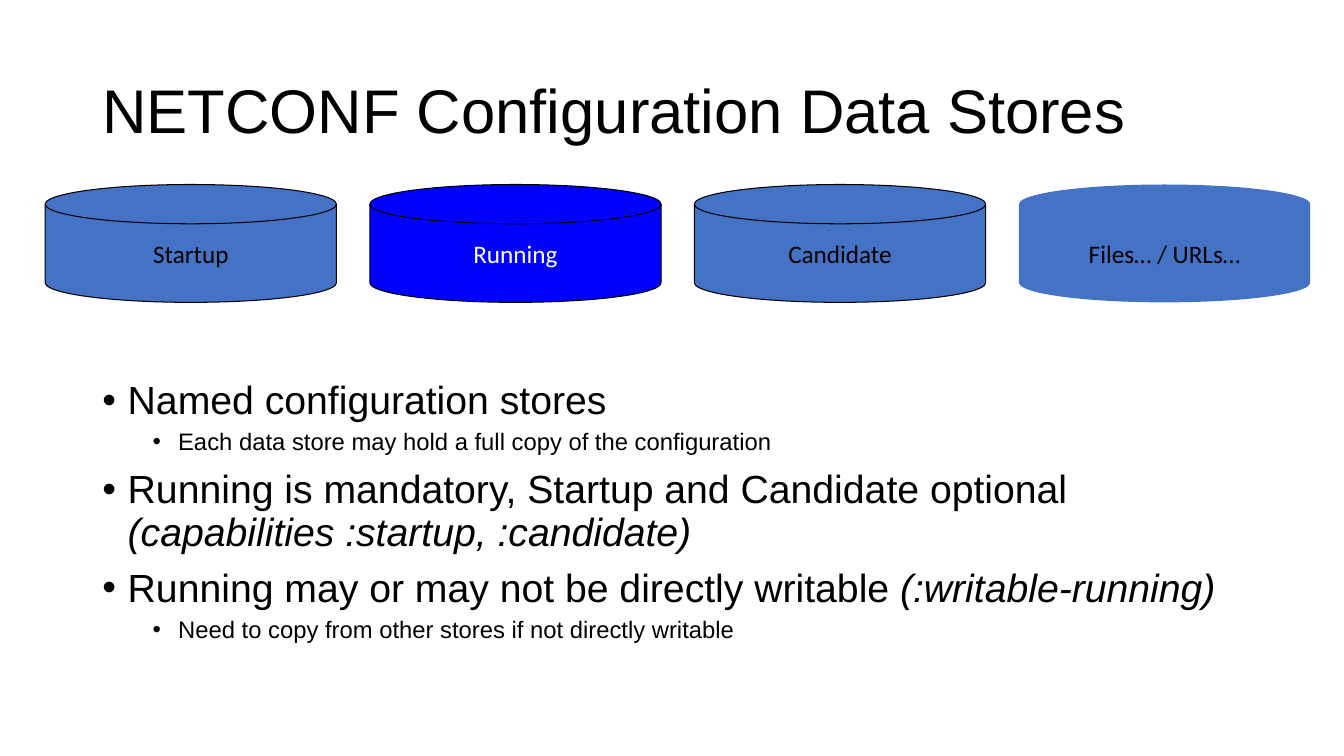
import pptx
import pptx.dml.color
import pptx.enum.shapes
import pptx.enum.text
import pptx.oxml.ns
import pptx.util
from lxml import etree

Cm = pptx.util.Cm
Pt = pptx.util.Pt
RGBColor = pptx.dml.color.RGBColor

BLACK = RGBColor(0x00, 0x00, 0x00)
WHITE = RGBColor(0xFF, 0xFF, 0xFF)
BLUE = RGBColor(0x44, 0x72, 0xC4)
BRIGHT_BLUE = RGBColor(0x00, 0x00, 0xFF)

STORES = [
    ("Startup", BLUE, BLACK, True),
    ("Running", BRIGHT_BLUE, WHITE, True),
    ("Candidate", BLUE, BLACK, True),
    ("Files… / URLs…", BLUE, BLACK, False),
]

POINTS = [
    (0, "Named configuration stores", ""),
    (1, "Each data store may hold a full copy of the configuration", ""),
    (0, "Running is mandatory, Startup and Candidate optional ", "(capabilities :startup, :candidate)"),
    (0, "Running may or may not be directly writable ", "(:writable-running)"),
    (1, "Need to copy from other stores if not directly writable", ""),
]


class Deck:
    text_font = "Arial"
    store_font = "Calibri"
    title_size = 44
    store_size = 18
    point_sizes = (28, 17)
    point_gaps = (10, 5)
    point_indents = (0.64, 1.91)
    hanging = 0.64
    line_spacing = 0.9

    def __init__(self):
        self.prs = pptx.Presentation()
        self.prs.slide_width = Cm(33.87)
        self.prs.slide_height = Cm(19.05)
        self.s = self.prs.slides.add_slide(self.prs.slide_layouts[6])

    def style_runs(self, p, font, size, color):
        for r in p.runs:
            r.font.name = font
            r.font.size = Pt(size)
            r.font.color.rgb = color

    def text_box(self, left, top, width, height):
        tf = self.s.shapes.add_textbox(Cm(left), Cm(top), Cm(width), Cm(height)).text_frame
        tf.word_wrap = True
        return tf

    def title(self, text, left, top, width, height):
        tf = self.text_box(left, top, width, height)
        tf.vertical_anchor = pptx.enum.text.MSO_ANCHOR.MIDDLE
        tf.text = text
        p = tf.paragraphs[0]
        p.line_spacing = self.line_spacing
        self.style_runs(p, self.text_font, self.title_size, BLACK)

    def bullets(self, points, left, top, width, height):
        tf = self.text_box(left, top, width, height)
        for i, (level, text, aside) in enumerate(points):
            p = tf.add_paragraph() if i else tf.paragraphs[0]
            p.text = text
            p.level = level
            p.line_spacing = self.line_spacing
            p.space_before = Pt(self.point_gaps[level])
            if aside:
                r = p.add_run()
                r.text = aside
                r.font.italic = True
            self.style_runs(p, self.text_font, self.point_sizes[level], BLACK)
            self.bullet(p, level)

    def bullet(self, p, level):
        pPr = p._p.get_or_add_pPr()
        pPr.set("marL", str(Cm(self.point_indents[level])))
        pPr.set("indent", str(-Cm(self.hanging)))
        etree.SubElement(pPr, pptx.oxml.ns.qn("a:buFont")).set("typeface", self.text_font)
        etree.SubElement(pPr, pptx.oxml.ns.qn("a:buChar")).set("char", "•")

    def store(self, text, fill, color, outlined, left, top, width, height):
        sp = self.s.shapes.add_shape(
            pptx.enum.shapes.MSO_SHAPE.FLOWCHART_MAGNETIC_DISK,
            Cm(left), Cm(top), Cm(width), Cm(height))
        sp.shadow.inherit = False
        sp.fill.solid()
        sp.fill.fore_color.rgb = fill
        if outlined:
            sp.line.color.rgb = BLACK
            sp.line.width = Pt(0.75)
        else:
            sp.line.fill.background()
        tf = sp.text_frame
        tf.margin_left = tf.margin_right = Cm(0.3)
        tf.margin_top = tf.margin_bottom = Cm(0.15)
        tf.word_wrap = True
        tf.text = text
        p = tf.paragraphs[0]
        p.alignment = pptx.enum.text.PP_ALIGN.CENTER
        self.style_runs(p, self.store_font, self.store_size, color)


def main():
    deck = Deck()
    deck.title("NETCONF Configuration Data Stores", 2.33, 1.01, 29.21, 3.68)
    deck.bullets(POINTS, 2.33, 9.47, 29.21, 7.11)
    for i, store in enumerate(STORES):
        deck.store(*store, 1.14 + i * 8.18, 4.65, 7.34, 2.97)
    deck.prs.save("out.pptx")


if __name__ == "__main__":
    main()
